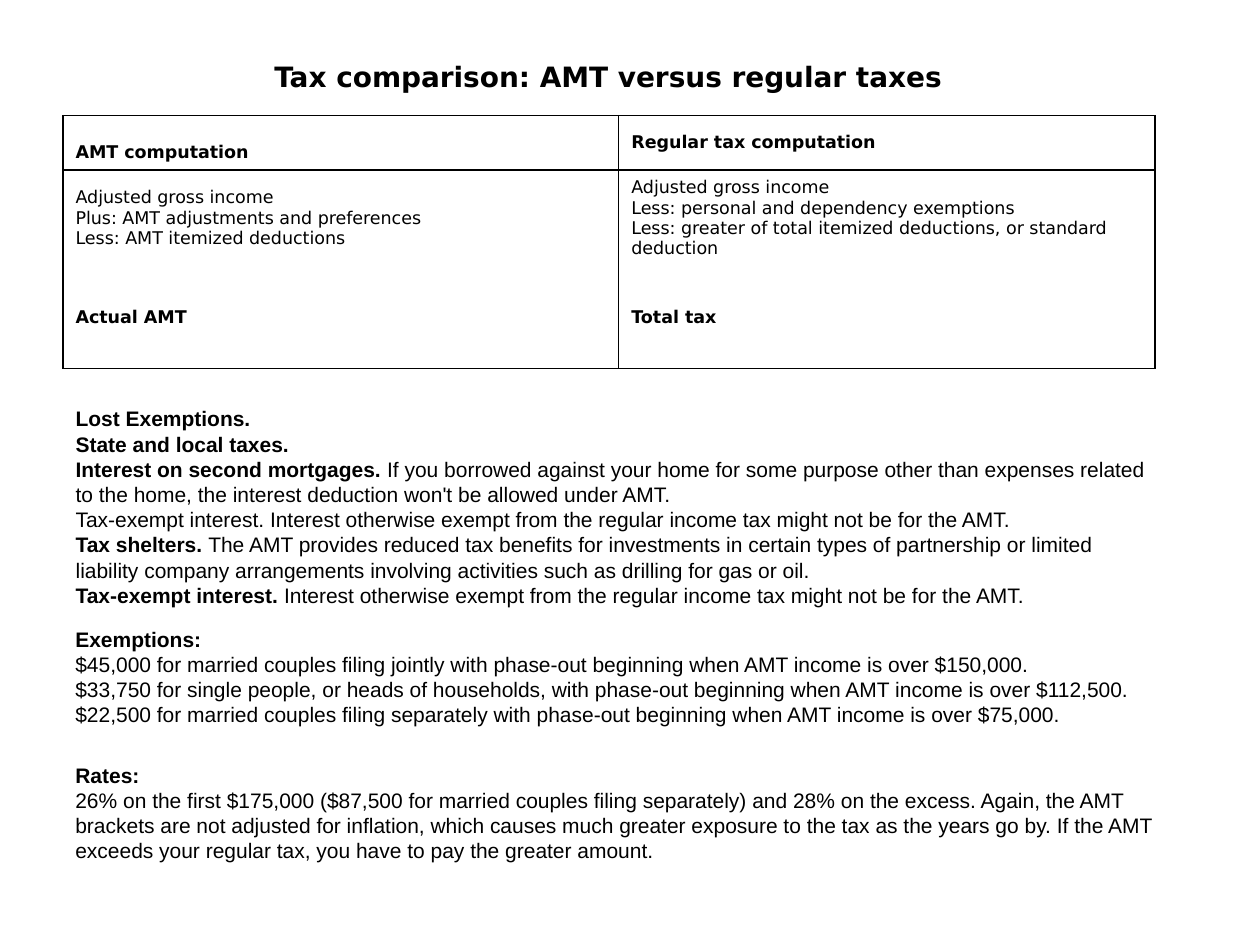
from dataclasses import dataclass

from lxml import etree
from pptx import Presentation
from pptx import util as u
from pptx.dml.color import RGBColor
from pptx.enum import text as t
from pptx.oxml import ns

Pt = u.Pt


@dataclass(frozen=True)
class Theme:
    ink: RGBColor = RGBColor(0, 0, 0)
    paper: RGBColor = RGBColor(255, 255, 255)
    heading_font: str = "DejaVu Sans"
    body_font: str = "Arial"
    title_size: float = 16
    table_size: float = 10
    body_size: float = 12
    rule: float = 0.75


THEME = Theme()
LEFT = 36

# Each paragraph is a (bold lead, plain remainder) pair
ADJUSTMENTS = [
    ("Lost Exemptions.", ""),
    ("State and local taxes.", ""),
    ("Interest on second mortgages. ",
     "If you borrowed against your home for some purpose other than expenses "
     "related to the home, the interest deduction won't be allowed under AMT."),
    ("", "Tax-exempt interest. Interest otherwise exempt from the regular "
         "income tax might not be for the AMT."),
    ("Tax shelters. ",
     "The AMT provides reduced tax benefits for investments in certain types "
     "of partnership or limited liability company arrangements involving "
     "activities such as drilling for gas or oil."),
    ("Tax-exempt interest.",
     " Interest otherwise exempt from the regular income tax might not be "
     "for the AMT."),
]
EXEMPTIONS = [("Exemptions:", "")] + [
    ("", f"{amount} for {filers} with phase-out beginning when AMT income is over {limit}.")
    for amount, filers, limit in (
        ("$45,000", "married couples filing jointly", "$150,000"),
        ("$33,750", "single people, or heads of households,", "$112,500"),
        ("$22,500", "married couples filing separately", "$75,000"),
    )
]
RATES = [
    ("Rates:", ""),
    ("", "26% on the first $175,000 ($87,500 for married couples filing "
         "separately) and 28% on the excess. Again, the AMT brackets are not "
         "adjusted for inflation, which causes much greater exposure to the "
         "tax as the years go by. If the AMT exceeds your regular tax, you "
         "have to pay the greater amount."),
]

# Table rows: height, bold, bordered edges, lines of each cell
COMPARISON = [
    (31.2, True, "LRTB", (["AMT computation"], ["Regular tax computation"])),
    (55.2, False, "LRT", (
        ["Adjusted gross income", "Plus: AMT adjustments and preferences",
         "Less: AMT itemized deductions"],
        ["Adjusted gross income", "Less: personal and dependency exemptions",
         "Less: greater of total itemized deductions, or standard deduction"])),
    (58.4, True, "LRB", (["Actual AMT"], ["Total tax"])),
]


def write(paragraph, content, *, font=THEME.body_font, size=THEME.body_size, bold=False):
    run = paragraph.add_run()
    run.text = content
    run.font.name, run.font.size, run.font.bold = font, Pt(size), bold
    run.font.color.rgb = THEME.ink


def place(shape, left, top, width, height):
    shape.left, shape.top = Pt(left), Pt(top)
    shape.width, shape.height = Pt(width), Pt(height)


def fill_title(title):
    place(title, 147.6, 30, 400, 27)
    frame = title.text_frame
    frame.word_wrap = False
    frame.auto_size = t.MSO_AUTO_SIZE.NONE
    frame.vertical_anchor = t.MSO_ANCHOR.MIDDLE
    frame.paragraphs[0].alignment = t.PP_ALIGN.CENTER
    write(frame.paragraphs[0], "Tax comparison: AMT versus regular taxes",
          font=THEME.heading_font, size=THEME.title_size, bold=True)


def fill_passage(frame, entries, wrap=True):
    frame.word_wrap = wrap
    frame.auto_size = t.MSO_AUTO_SIZE.NONE
    for index, entry in enumerate(entries):
        paragraph = frame.add_paragraph() if index else frame.paragraphs[0]
        paragraph.space_before = Pt(0)
        # Plain lines: no bullet and no hanging indent
        props = paragraph._p.get_or_add_pPr()
        props.set("marL", "0")
        props.set("indent", "0")
        etree.SubElement(props, ns.qn("a:buNone"))
        for part, bold in zip(entry, (True, False)):
            if part:
                write(paragraph, part, bold=bold)


def add_passage(slide, entries, top, width, height, wrap=True):
    box = slide.shapes.add_textbox(Pt(LEFT), Pt(top), Pt(width), Pt(height))
    fill_passage(box.text_frame, entries, wrap)


def set_borders(cell, edges):
    props = cell._tc.get_or_add_tcPr()
    for edge in "LRTB":
        line = etree.SubElement(props, ns.qn(f"a:ln{edge}"), w=str(Pt(THEME.rule)))
        if edge in edges:
            fill = etree.SubElement(line, ns.qn("a:solidFill"))
            etree.SubElement(fill, ns.qn("a:srgbClr"), val=str(THEME.ink))
        else:
            etree.SubElement(line, ns.qn("a:noFill"))


def fill_cell(cell, lines, bold, edges):
    set_borders(cell, edges)
    cell.fill.solid()
    cell.fill.fore_color.rgb = THEME.paper
    cell.vertical_anchor = t.MSO_ANCHOR.MIDDLE
    paragraph = cell.text_frame.paragraphs[0]
    for index, line in enumerate(lines):
        if index:
            paragraph.add_line_break()
        write(paragraph, line, font=THEME.heading_font, size=THEME.table_size, bold=bold)


def add_comparison(slide):
    widths = (317.6, 306.4)
    height = sum(row[0] for row in COMPARISON)
    table = slide.shapes.add_table(len(COMPARISON), len(widths), Pt(LEFT), Pt(66),
                                   Pt(sum(widths)), Pt(height)).table
    table.first_row = table.horz_banding = False
    for column, width in zip(table.columns, widths):
        column.width = Pt(width)
    for r, (row_height, bold, edges, cells) in enumerate(COMPARISON):
        table.rows[r].height = Pt(row_height)
        for c, lines in enumerate(cells):
            fill_cell(table.cell(r, c), lines, bold, edges)
    # The AMT heading sits lower than its neighbour
    table.cell(0, 0).margin_top = Pt(15)


def main():
    deck = Presentation()
    deck.slide_width, deck.slide_height = Pt(720), Pt(540)
    slide = deck.slides.add_slide(deck.slide_layouts[1])

    # Heading and side-by-side computation
    fill_title(slide.shapes.title)
    add_comparison(slide)

    # Adjustments, exemptions and rates
    adjustments = slide.placeholders[1]
    place(adjustments, LEFT, 228.4, 631.4, 136.8)
    fill_passage(adjustments.text_frame, ADJUSTMENTS)
    add_passage(slide, EXEMPTIONS, 354.2, 620, 65, wrap=False)
    add_passage(slide, RATES, 432, 635.8, 65)

    deck.save("out.pptx")


if __name__ == "__main__":
    main()
